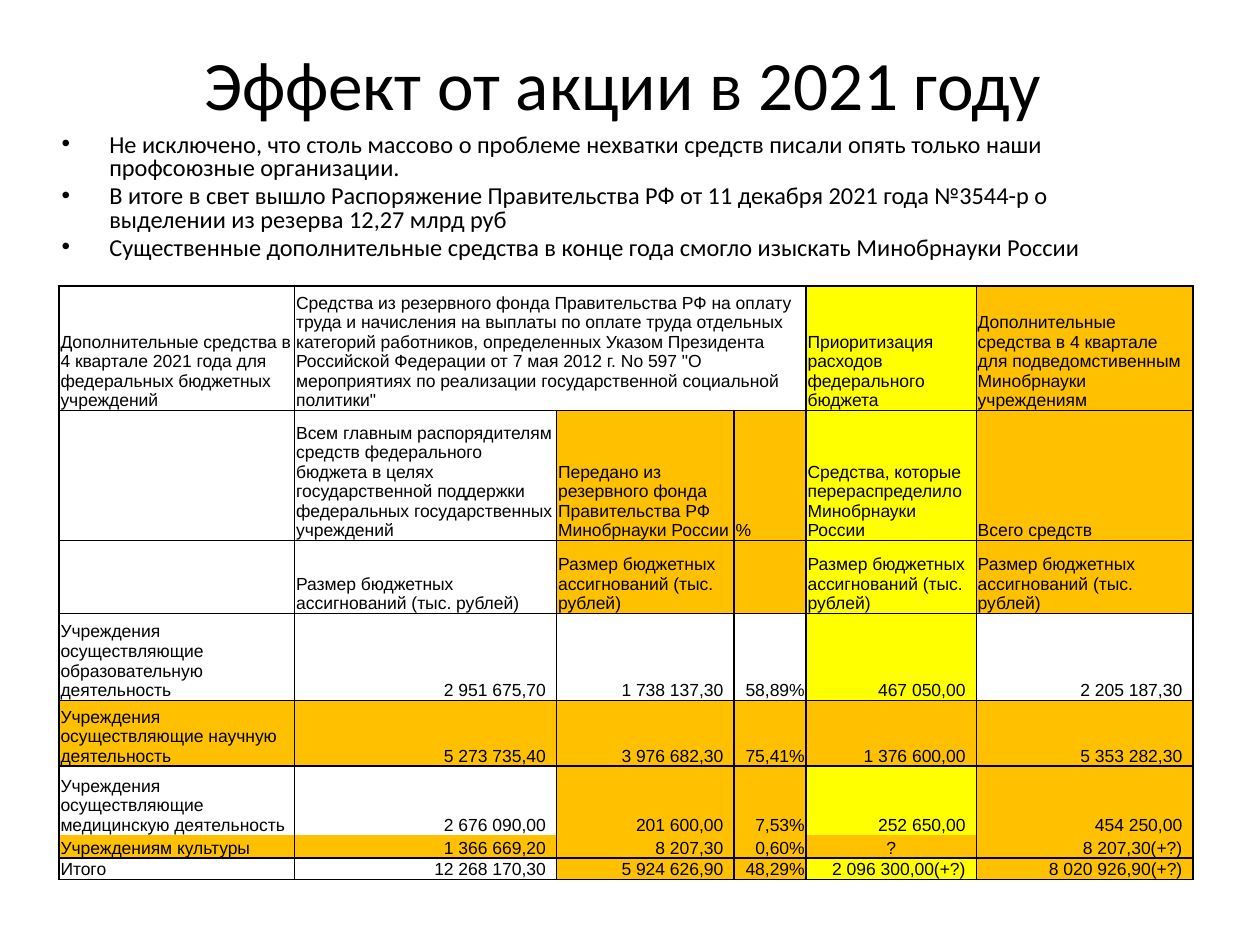
from lxml import etree
from pptx import Presentation
from pptx.dml.color import RGBColor
from pptx.enum import text
from pptx.oxml import ns
from pptx.util import Cm, Pt

BLACK = RGBColor(0x00, 0x00, 0x00)
FILLS = {
    "W": RGBColor(0xFF, 0xFF, 0xFF),
    "Y": RGBColor(0xFF, 0xFF, 0x00),
    "O": RGBColor(0xFF, 0xC0, 0x00),
}

TITLE = "Эффект от акции в 2021 году"
POINTS = [
    "Не исключено, что столь массово о проблеме нехватки средств писали опять только наши "
    "профсоюзные организации.",
    "В итоге в свет вышло Распоряжение Правительства РФ от 11 декабря 2021 года №3544-р о "
    "выделении из резерва 12,27 млрд руб",
    "Существенные дополнительные средства в конце года смогло изыскать Минобрнауки России",
]
AMOUNT = "Размер бюджетных ассигнований (тыс. рублей)"

# Row height in cm, fill code per column, cell texts
ROWS = [
    (2.51, "WWWWYO", [
        "Дополнительные средства в 4 квартале 2021 года для федеральных бюджетных учреждений",
        "Средства из резервного фонда Правительства РФ на оплату труда и начисления на выплаты "
        "по оплате труда отдельных категорий работников, определенных Указом Президента "
        "Российской Федерации от 7 мая 2012 г. No 597 \"О мероприятиях по реализации "
        "государственной социальной политики\"",
        "", "",
        "Приоритизация расходов федерального бюджета",
        "Дополнительные средства в 4 квартале для подведомстивенным Минобрнауки учреждениям"]),
    (2.62, "WWOOYO", [
        "",
        "Всем главным распорядителям средств федерального бюджета в целях государственной "
        "поддержки федеральных государственных учреждений",
        "Передано из резервного фонда Правительства РФ Минобрнауки России",
        "%",
        "Средства, которые перераспределило Минобрнауки России",
        "Всего средств"]),
    (1.47, "WWOOYO", ["", AMOUNT, AMOUNT, "", AMOUNT, AMOUNT]),
    (1.75, "WWWWYW", ["Учреждения осуществляющие образовательную деятельность",
                      "2 951 675,70", "1 738 137,30", "58,89%", "467 050,00", "2 205 187,30"]),
    (1.32, "OOOOOO", ["Учреждения осуществляющие научную деятельность",
                      "5 273 735,40", "3 976 682,30", "75,41%", "1 376 600,00", "5 353 282,30"]),
    (1.4, "WWOOYO", ["Учреждения осуществляющие медицинскую деятельность",
                     "2 676 090,00", "201 600,00", "7,53%", "252 650,00", "454 250,00"]),
    (0.46, "OOOOOO", ["Учреждениям культуры",
                      "1 366 669,20", "8 207,30", "0,60%", "?", "8 207,30(+?)"]),
    (0.43, "WWOOYO", ["Итого", "12 268 170,30", "5 924 626,90", "48,29%",
                      "2 096 300,00(+?)", "8 020 926,90(+?)"]),
]
COLUMN_WIDTHS = [4.75, 5.28, 3.58, 1.45, 3.43, 4.37]
HEADER_ROWS = 3
MEDICINE_ROW, CULTURE_ROW = 5, 6  # no rule between these two


def place(part, left, top, width, height):
    part.left, part.top, part.width, part.height = Cm(left), Cm(top), Cm(width), Cm(height)


def add_run(paragraph, content, font, size):
    run = paragraph.add_run()
    run.text = content
    run.font.name, run.font.size = font, Pt(size)
    run.font.color.rgb = BLACK


def set_borders(cell, hidden):
    """Rule all sides in black except those in hidden; call before filling the cell."""
    properties = cell._tc.get_or_add_tcPr()
    for side in "LRTB":
        line = etree.SubElement(properties, ns.qn(f"a:ln{side}"), w=str(Pt(1)))
        if side in hidden:
            etree.SubElement(line, ns.qn("a:noFill"))
        else:
            solid = etree.SubElement(line, ns.qn("a:solidFill"))
            etree.SubElement(solid, ns.qn("a:srgbClr"), val=str(BLACK))


def fill_cell(cell, row, column, content, fill):
    set_borders(cell, {MEDICINE_ROW: "B", CULTURE_ROW: "T"}.get(row, ""))
    cell.fill.solid()
    cell.fill.fore_color.rgb = FILLS[fill]
    cell.vertical_anchor = text.MSO_ANCHOR.BOTTOM
    cell.margin_left = cell.margin_right = cell.margin_top = Cm(0.03)
    cell.margin_bottom = 0
    paragraph = cell.text_frame.paragraphs[0]
    if content == "?":
        paragraph.alignment = text.PP_ALIGN.CENTER
    elif row >= HEADER_ROWS and column > 0:
        paragraph.alignment = text.PP_ALIGN.RIGHT
        if not content.endswith("%"):
            cell.margin_right = Cm(0.22)
    if content:
        add_run(paragraph, content, "Arial", 10)
    else:
        paragraph.font.size = Pt(10)


def add_funds_table(slide):
    heights = [height for height, _, _ in ROWS]
    frame = slide.shapes.add_table(
        len(ROWS), len(COLUMN_WIDTHS), Cm(1.19), Cm(5.77),
        Cm(sum(COLUMN_WIDTHS)), Cm(sum(heights)))
    funds = frame.table
    funds.first_row = funds.horz_banding = False
    for column, width in zip(funds.columns, COLUMN_WIDTHS):
        column.width = Cm(width)
    for r, (height, fills, contents) in enumerate(ROWS):
        funds.rows[r].height = Cm(height)
        for c, (content, fill) in enumerate(zip(contents, fills)):
            fill_cell(funds.cell(r, c), r, c, content, fill)
    funds.cell(0, 1).merge(funds.cell(0, 3))


def main():
    deck = Presentation()
    deck.slide_width, deck.slide_height = Cm(25.4), Cm(19.05)
    slide = deck.slides.add_slide(deck.slide_layouts[1])

    title = slide.shapes.title
    place(title, 0.99, 0.76, 23.14, 1.83)
    title.text_frame.auto_size = text.MSO_AUTO_SIZE.NONE
    title.text_frame.vertical_anchor = text.MSO_ANCHOR.MIDDLE
    heading = title.text_frame.paragraphs[0]
    heading.alignment = text.PP_ALIGN.CENTER
    add_run(heading, TITLE, "Calibri", 39.6)

    body = slide.placeholders[1]
    place(body, 0.99, 2.59, 22.73, 2.9)
    body.text_frame.auto_size = text.MSO_AUTO_SIZE.NONE
    for i, point in enumerate(POINTS):
        paragraph = body.text_frame.add_paragraph() if i else body.text_frame.paragraphs[0]
        paragraph.line_spacing = 0.8
        properties = paragraph._p.get_or_add_pPr()
        properties.set("marL", str(Cm(0.96)))
        properties.set("indent", str(-Cm(0.96)))
        add_run(paragraph, point, "Calibri", 13.9)

    add_funds_table(slide)
    deck.save("out.pptx")


if __name__ == "__main__":
    main()
